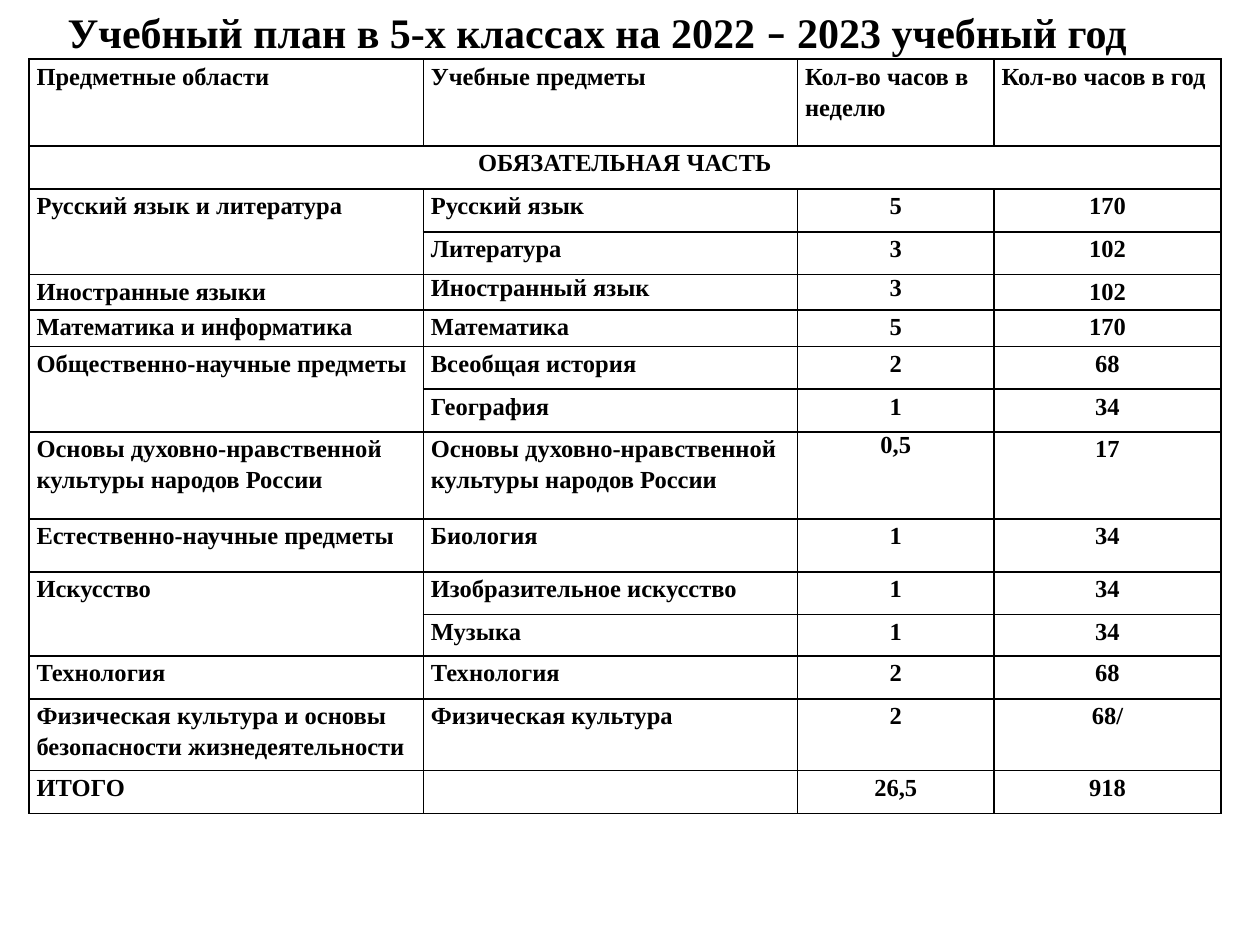
from lxml import etree
from pptx import Presentation
from pptx.dml.color import RGBColor
from pptx.enum.text import MSO_ANCHOR, MSO_AUTO_SIZE, PP_ALIGN
from pptx.oxml.ns import qn
from pptx.util import Inches, Pt

CENTER, LEFT = PP_ALIGN.CENTER, PP_ALIGN.LEFT
MIDDLE = MSO_ANCHOR.MIDDLE
FIT_SHAPE = MSO_AUTO_SIZE.SHAPE_TO_FIT_TEXT
SERIF, SANS = "Times New Roman", "Calibri"
BLACK = "000000"

TITLE = [
    ("Учебный план в 5-х классах на 2022 ", SERIF),
    ("–", SANS),
    (" 2023 учебный год", SERIF),
]
COLUMN_WIDTHS = [3.13, 2.97, 1.56, 1.8]
HEADER = ("Предметные области", "Учебные предметы", "Кол-во часов в неделю", "Кол-во часов в год")
SECTION = "ОБЯЗАТЕЛЬНАЯ ЧАСТЬ"
ETHICS = "Основы духовно-нравственной культуры народов России"
CURRICULUM = [
    (0.69, HEADER),
    (0.34, (SECTION, None, None, None)),
    (0.34, ("Русский язык и литература", "Русский язык", "5", "170")),
    (0.34, (None, "Литература", "3", "102")),
    (0.28, ("Иностранные языки", "Иностранный язык", "3", "102")),
    (0.29, ("Математика и информатика", "Математика", "5", "170")),
    (0.34, ("Общественно-научные предметы", "Всеобщая история", "2", "68")),
    (0.34, (None, "География", "1", "34")),
    (0.69, (ETHICS, ETHICS, "0,5", "17")),
    (0.42, ("Естественно-научные предметы", "Биология", "1", "34")),
    (0.34, ("Искусство", "Изобразительное искусство", "1", "34")),
    (0.33, (None, "Музыка", "1", "34")),
    (0.34, ("Технология", "Технология", "2", "68")),
    (0.57, ("Физическая культура и основы безопасности жизнедеятельности",
            "Физическая культура", "2", "68/")),
    (0.34, ("ИТОГО", "", "26,5", "918")),
]
SINGLE_SPACED = {(4, 1), (4, 2), (8, 2)}


def color(value):
    """Turn a hex string into a colour."""
    return RGBColor.from_string(value)


def style_font(font, size, name=SERIF):
    """Apply the bold black lettering used on the slide."""
    font.name, font.size, font.bold = name, Pt(size), True
    font.color.rgb = color(BLACK)


def add_borders(cell):
    """Draw a thin black line on every side of a cell."""
    properties = cell._tc.get_or_add_tcPr()
    for side in ("a:lnL", "a:lnR", "a:lnT", "a:lnB"):
        line = etree.SubElement(properties, qn(side), w=str(Pt(1)))
        fill = etree.SubElement(line, qn("a:solidFill"))
        etree.SubElement(fill, qn("a:srgbClr"), val=BLACK)


def fill_cell(cell, text, align, spacing):
    """Format one cell and write its text."""
    cell.margin_left = cell.margin_right = Inches(0.06)
    cell.margin_top = cell.margin_bottom = 0
    add_borders(cell)
    cell.fill.background()
    para = cell.text_frame.paragraphs[0]
    para.alignment, para.line_spacing = align, spacing
    style_font(para.font, 14)
    if text:
        span = para.add_run()
        span.text = text
        style_font(span.font, 14)


def add_title(page, left, top, width, height):
    """Place the slide title in the given box."""
    box = page.shapes.title
    box.left, box.top, box.width, box.height = map(Inches, (left, top, width, height))
    frame = box.text_frame
    frame.word_wrap = True
    frame.auto_size = FIT_SHAPE
    frame.vertical_anchor = MIDDLE
    para = frame.paragraphs[0]
    para.alignment = CENTER
    for text, name in TITLE:
        span = para.add_run()
        span.text = text
        style_font(span.font, 24, name)


def add_curriculum(page, left, top, width, height):
    """Place the curriculum table in the given box."""
    table = page.shapes.add_table(
        len(CURRICULUM), len(COLUMN_WIDTHS), *map(Inches, (left, top, width, height))
    ).table
    table.first_row = table.horz_banding = False
    for column, column_width in zip(table.columns, COLUMN_WIDTHS):
        column.width = Inches(column_width)
    for row, (row_height, texts) in enumerate(CURRICULUM):
        table.rows[row].height = Inches(row_height)
        for col, text in enumerate(texts):
            centered = text == SECTION or (row > 0 and col > 1)
            spacing = 1.0 if (row, col) in SINGLE_SPACED else 1.15
            fill_cell(table.cell(row, col), text, CENTER if centered else LEFT, spacing)
        if texts[0] is None:
            table.cell(row - 1, 0).merge(table.cell(row, 0))
        elif texts[1] is None:
            table.cell(row, 0).merge(table.cell(row, len(texts) - 1))


def main():
    """Build the slide and save the deck."""
    deck = Presentation()
    deck.slide_width, deck.slide_height = Inches(10), Inches(7.5)
    page = deck.slides.add_slide(deck.slide_layouts[5])
    add_title(page, 0.39, 0, 8.7, 0.5)
    add_curriculum(page, 0.23, 0.47, 9.45, 6.02)
    deck.save("out.pptx")


if __name__ == "__main__":
    main()
